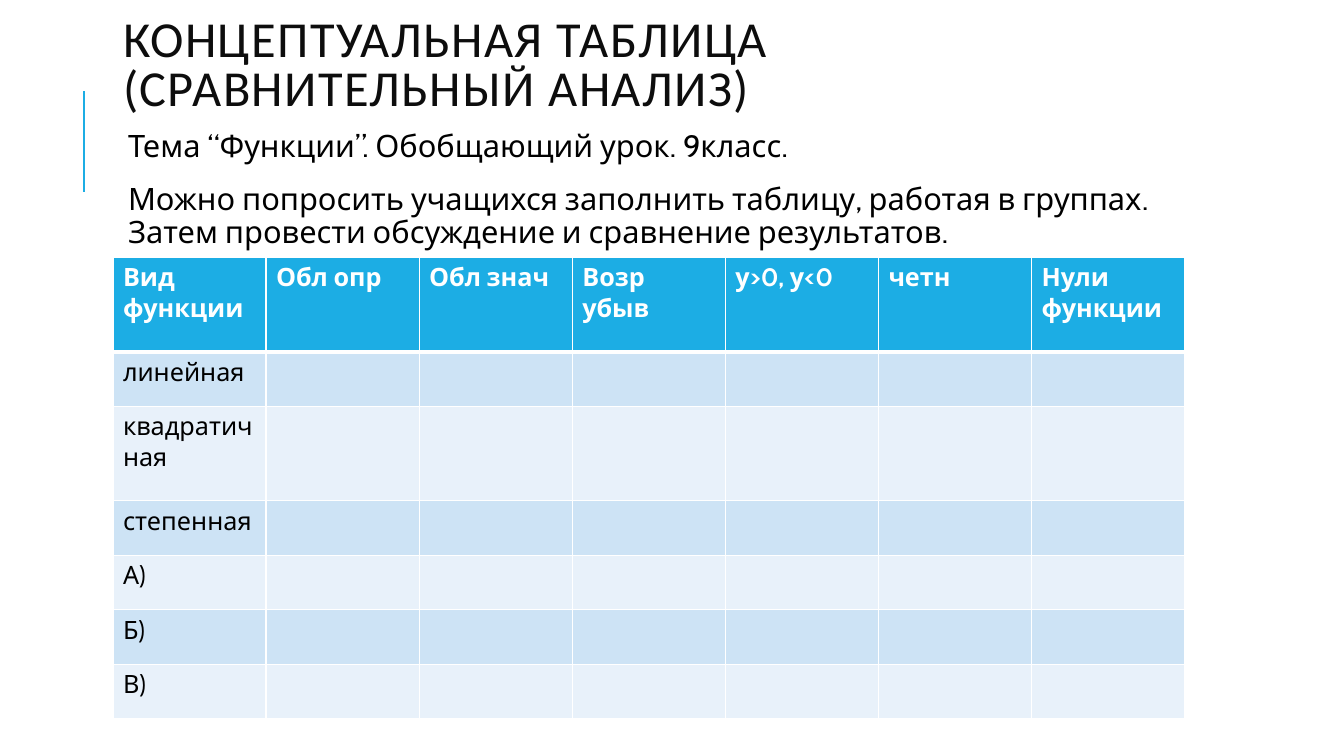
from lxml.etree import SubElement
from pptx import Presentation
from pptx.dml.color import RGBColor
from pptx.enum.shapes import MSO_CONNECTOR
from pptx.enum.text import MSO_ANCHOR, MSO_AUTO_SIZE, PP_ALIGN
from pptx.oxml.ns import qn
from pptx.util import Inches, Pt

COLORS = {
    "accent": "1CADE4",
    "title": "0D0D0D",
    "text": "000000",
    "white": "FFFFFF",
    "band_dark": "CDE3F5",
    "band_light": "E8F1FA",
}
TITLE = "КОНЦЕПТУАЛЬНАЯ ТАБЛИЦА (СРАВНИТЕЛЬНЫЙ АНАЛИЗ)"
BODY = [
    "Тема “Функции”. Обобщающий урок. 9класс.",
    "Можно попросить учащихся заполнить таблицу, работая в группах. "
    "Затем провести обсуждение и сравнение результатов.",
]
HEADERS = ["Вид функции", "Обл опр", "Обл знач", "Возр убыв",
           "у>0, у<0", "четн", "Нули функции"]
FUNCTION_KINDS = ["линейная", "квадратичная", "степенная", "А)", "Б)", "В)"]
TALL_ROWS = {0, 2}


class SlideBuilder:
    title_font = "Calibri"
    body_font = "Cabin"

    def __init__(self, presentation):
        self.slide = presentation.slides.add_slide(presentation.slide_layouts[1])

    def color(self, name):
        return RGBColor.from_string(COLORS[name])

    def place(self, shape, left, top, width, height):
        shape.left, shape.top = Inches(left), Inches(top)
        shape.width, shape.height = Inches(width), Inches(height)

    def add_run(self, paragraph, text, size, color, font, bold=False):
        run = paragraph.add_run()
        run.text = text
        run.font.size = Pt(size)
        run.font.name = font
        run.font.bold = bold
        run.font.color.rgb = self.color(color)
        return run

    def add_accent_line(self, left, top, bottom):
        line = self.slide.shapes.add_connector(
            MSO_CONNECTOR.STRAIGHT, Inches(left), Inches(bottom), Inches(left), Inches(top))
        line.line.color.rgb = self.color("accent")
        line.line.width = Pt(1.5)
        SubElement(line._element.spPr, qn("a:effectLst"))

    def add_title(self, text, *box):
        title = self.slide.shapes.title
        self.place(title, *box)
        frame = title.text_frame
        frame.auto_size = MSO_AUTO_SIZE.NONE
        frame.word_wrap = True
        frame.vertical_anchor = MSO_ANCHOR.MIDDLE
        frame.margin_top, frame.margin_bottom = 0, Inches(0.67)
        paragraph = frame.paragraphs[0]
        paragraph.alignment = PP_ALIGN.LEFT
        paragraph.line_spacing = 0.8
        run = self.add_run(paragraph, text, 36, "title", self.title_font)
        run.font._element.set("spc", "100")

    def add_body(self, texts, *box):
        body = self.slide.placeholders[1]
        self.place(body, *box)
        frame = body.text_frame
        frame.auto_size = MSO_AUTO_SIZE.NONE
        frame.word_wrap = True
        frame.vertical_anchor = MSO_ANCHOR.TOP
        frame.margin_left = frame.margin_right = Inches(0.05)
        frame.margin_top = frame.margin_bottom = Inches(0.05)
        for index, text in enumerate(texts):
            paragraph = frame.add_paragraph() if index else frame.paragraphs[0]
            paragraph.alignment = PP_ALIGN.LEFT
            paragraph.line_spacing = 0.9
            paragraph.space_before, paragraph.space_after = Pt(12), Pt(2)
            self.set_blank_bullet(paragraph)
            self.add_run(paragraph, text, 22, "text", self.body_font)

    def set_blank_bullet(self, paragraph):
        properties = paragraph._p.get_or_add_pPr()
        properties.set("marL", str(Inches(0.1)))
        properties.set("indent", str(Inches(-0.1)))
        bullet_color = SubElement(properties, qn("a:buClr"))
        SubElement(bullet_color, qn("a:srgbClr"), val=COLORS["accent"])
        SubElement(properties, qn("a:buChar"), char=" ")

    def add_table(self, headers, row_names, left, top, width):
        heights = [0.94 if row in TALL_ROWS else 0.54 for row in range(len(row_names) + 1)]
        table = self.slide.shapes.add_table(
            len(heights), len(headers), Inches(left), Inches(top),
            Inches(width), Inches(sum(heights))).table
        for row, height in enumerate(heights):
            table.rows[row].height = Inches(height)
            for column, header in enumerate(headers):
                cell = table.cell(row, column)
                self.set_borders(cell, top=3 if row == 1 else 1, bottom=3 if row == 0 else 1)
                band = "band_dark" if row % 2 else "band_light"
                cell.fill.solid()
                cell.fill.fore_color.rgb = self.color(band if row else "accent")
                paragraph = cell.text_frame.paragraphs[0]
                if row == 0:
                    self.add_run(paragraph, header, 18, "white", self.body_font, bold=True)
                elif column == 0:
                    self.add_run(paragraph, row_names[row - 1], 18, "text", self.body_font)

    def set_borders(self, cell, top, bottom):
        """Draw white cell borders; top and bottom are widths in points."""
        properties = cell._tc.get_or_add_tcPr()
        for side, width in (("L", 1), ("R", 1), ("T", top), ("B", bottom)):
            border = SubElement(properties, qn(f"a:ln{side}"), w=str(Pt(width)))
            fill = SubElement(border, qn("a:solidFill"))
            SubElement(fill, qn("a:srgbClr"), val=COLORS["white"])


def main():
    presentation = Presentation()
    presentation.slide_width, presentation.slide_height = Inches(13.33), Inches(7.5)
    builder = SlideBuilder(presentation)
    builder.add_accent_line(0.83, 0.9, 1.9)
    builder.add_title(TITLE, 1.12, 0.64, 10.63, 0.73)
    builder.add_body(BODY, 1.12, 1.25, 10.63, 5.65)
    builder.add_table(HEADERS, FUNCTION_KINDS, 1.12, 2.55, 10.63)
    presentation.save("out.pptx")


if __name__ == "__main__":
    main()
